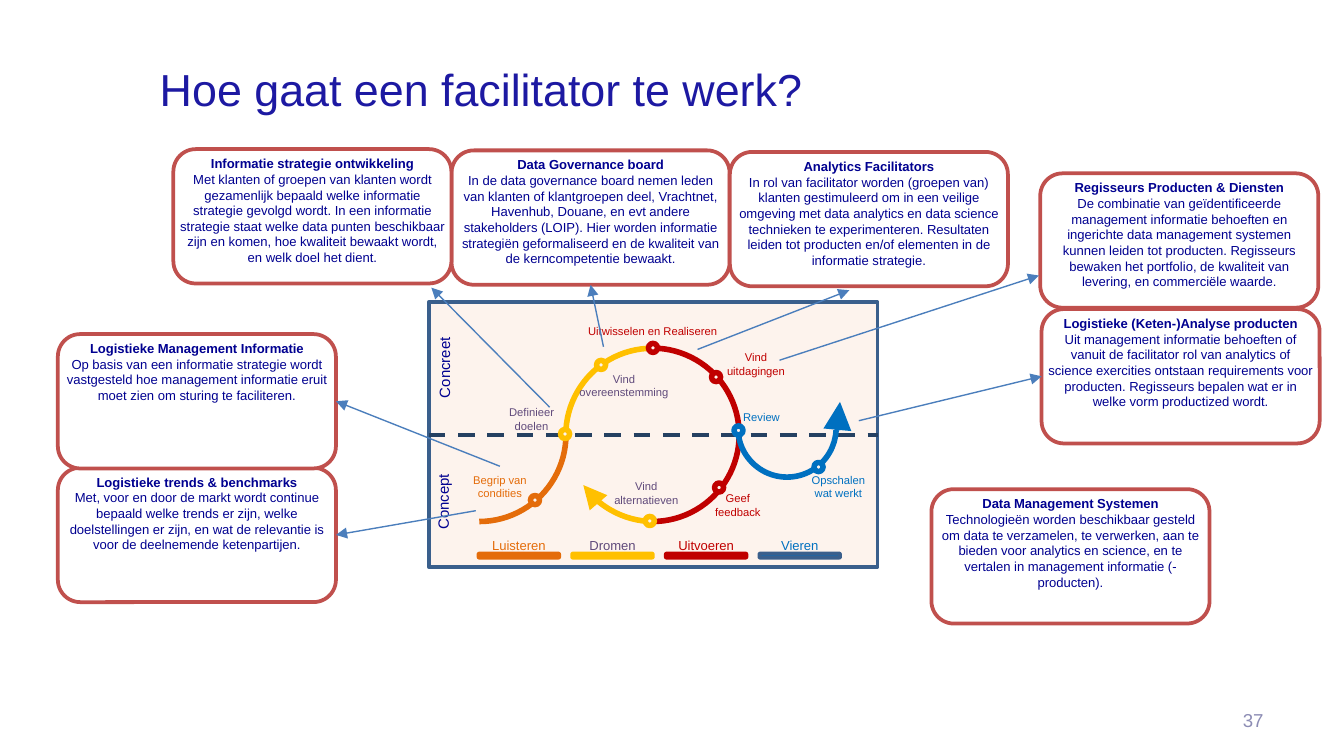
import pptx
import pptx.util
import pptx.dml.color
import pptx.enum.dml
import pptx.enum.shapes
import pptx.enum.text
import pptx.oxml.ns
from lxml import etree

Pt = pptx.util.Pt
Shape = pptx.enum.shapes.MSO_SHAPE
Align = pptx.enum.text.PP_ALIGN
Anchor = pptx.enum.text.MSO_ANCHOR

FONT = "Arial"
NAVY, CREAM, STEEL = "000090", "FDF3ED", "3A5F8C"
ORANGE, YELLOW, RED, BLUE, PURPLE = "E46C0A", "FFC000", "C00000", "0070C0", "604A7B"

# key: left, top, heading, body
CARD_W, CARD_H = 149, 72
CARDS = {
    "systems": (499, 262.1, "Data Management Systemen",
                "Technologieën worden beschikbaar gesteld om data te verzamelen, te verwerken, aan te bieden voor analytics en science, en te vertalen in management informatie (-producten)."),
    "owners": (557.3, 92.9, "Regisseurs Producten & Diensten",
               "De combinatie van geïdentificeerde management informatie behoeften en ingerichte data management systemen kunnen leiden tot producten. Regisseurs bewaken het portfolio, de kwaliteit van levering, en commerciële waarde."),
    "products": (558, 165.6, "Logistieke (Keten-)Analyse producten",
                 "Uit management informatie behoeften of vanuit de facilitator rol van analytics of science exercities ontstaan requirements voor producten. Regisseurs bepalen wat er in welke vorm productized wordt."),
    "trends": (31, 250.6, "Logistieke trends & benchmarks",
               "Met, voor en door de markt wordt continue bepaald welke trends er zijn, welke doelstellingen er zijn, en wat de relevantie is voor de deelnemende ketenpartijen."),
    "board": (241.9, 80.6, "Data Governance board",
              "In de data governance board nemen leden van klanten of klantgroepen deel, Vrachtnet, Havenhub, Douane, en evt andere stakeholders (LOIP). Hier worden informatie strategiën geformaliseerd en de kwaliteit van de kerncompetentie bewaakt."),
    "analytics": (391, 81.4, "Analytics Facilitators",
                  "In rol van facilitator worden (groepen van) klanten gestimuleerd om in een veilige omgeving met data analytics en data science technieken te experimenteren. Resultaten leiden tot producten en/of elementen in de informatie strategie."),
    "info": (31, 179, "Logistieke Management Informatie",
             "Op basis van een informatie strategie wordt vastgesteld hoe management informatie eruit moet zien om sturing te faciliteren."),
    "strategy": (92.9, 79.9, "Informatie strategie ontwikkeling",
                 "Met klanten of groepen van klanten wordt gezamenlijk bepaald welke informatie strategie gevolgd wordt. In een informatie strategie staat welke data punten beschikbaar zijn en komen, hoe kwaliteit bewaakt wordt, en welk doel het dient."),
}

# start x, y, end x, y, joined card, side
ARROWS = [
    (254.9, 273.6, 180, 286.6, "trends", 3),
    (417.6, 193, 556.6, 147.6, None, None),
    (323.3, 185.8, 316.4, 152.6, "board", 2),
    (294.5, 218.2, 231.1, 154.1, None, None),
    (267.8, 249.8, 180, 215, "info", 3),
    (460.1, 225.4, 558, 201.6, "products", 1),
    (373.7, 187.2, 455, 155.5, None, None),
]

# left, top, size, rotation, start and end angle, colour
ARCS = [
    (210.3, 186.5, 92.9, 90, 270, 0, ORANGE),
    (303.1, 186.5, 92.9, 270, 270, 0, YELLOW),
    (303.1, 186.5, 92.9, 0, 270, 0, RED),
    (303.1, 186.5, 92.9, 90, 270, 0, RED),
    (303.8, 186.5, 92.9, 180, 270, 317, YELLOW),
    (395.3, 203, 52.6, 180, 182.4, 0, BLUE),
]
# start x, y, end x, y, colour, width
TIPS = [(317.5, 265.7, 312.5, 259.9, YELLOW, 2.5), (448.6, 230.4, 450, 215.3, BLUE, 3)]

# text, its colour, bar fill, bar line
PHASES = [("Luisteren", ORANGE, ORANGE, ORANGE), ("Dromen", PURPLE, YELLOW, YELLOW),
          ("Uitvoeren", RED, RED, RED), ("Vieren", BLUE, BLUE, STEEL)]
BAR_W, NAME_W = 43.2, 50

# text, centre x, top, width, colour
STEPS = [
    ("Begrip van\ncondities", 267.8, 249.8, 46, ORANGE),
    ("Definieer\ndoelen", 284.8, 213.8, 42, PURPLE),
    ("Vind\novereenstemming", 334.3, 195.8, 66, PURPLE),
    ("Uitwisselen en Realiseren", 349.6, 170.3, 88, RED),
    ("Vind\nuitdagingen", 405, 184.3, 48, RED),
    ("Geef\nfeedback", 395.3, 259.9, 42, RED),
    ("Vind\nalternatieven", 346.3, 253.4, 52, PURPLE),
    ("Review", 407.9, 216.4, 38, BLUE),
    ("Opschalen\nwat werkt", 449.1, 249.8, 46, BLUE),
]

# centre x, y, colour
DOTS = [
    (286.6, 267.9, ORANGE), (302.7, 232.5, YELLOW), (348.1, 279.1, YELLOW),
    (385.2, 261.2, RED), (438.5, 250.2, BLUE), (395.6, 230.6, BLUE),
    (383.6, 202, RED), (349.8, 186.4, RED), (322, 195.5, YELLOW),
]

deck = pptx.Presentation()
deck.slide_width, deck.slide_height = Pt(720), Pt(405)
slide = deck.slides.add_slide(deck.slide_layouts[6])


def rgb(code):
    return pptx.dml.color.RGBColor.from_string(code)


def style(para, size, color, align=None, bold=False):
    para.alignment = align
    for run in para.runs:
        font = run.font
        font.name, font.size, font.bold = FONT, Pt(size), bold
        font.color.rgb = rgb(color)


def label(text, x, y, w, h, size, color, align=None, wrap=False, anchor=Anchor.TOP):
    box = slide.shapes.add_textbox(Pt(x), Pt(y), Pt(w), Pt(h))
    frame = box.text_frame
    frame.word_wrap, frame.vertical_anchor = wrap, anchor
    frame.paragraphs[0].text = text
    style(frame.paragraphs[0], size, color, align)
    return box


def shape(kind, x, y, w, h, fill=None, line=None, width=2):
    item = slide.shapes.add_shape(kind, Pt(x), Pt(y), Pt(w), Pt(h))
    item.shadow.inherit = False
    if fill:
        item.fill.solid()
        item.fill.fore_color.rgb = rgb(fill)
    else:
        item.fill.background()
    if line:
        item.line.color.rgb = rgb(line)
        item.line.width = Pt(width)
    else:
        item.line.fill.background()
    return item


def link(x1, y1, x2, y2, color, width, head=None):
    """Add a straight line; head is the size of its arrowhead."""
    wire = slide.shapes.add_connector(pptx.enum.shapes.MSO_CONNECTOR.STRAIGHT,
                                      Pt(x1), Pt(y1), Pt(x2), Pt(y2))
    wire.line.color.rgb = rgb(color)
    wire.line.width = Pt(width)
    qn = pptx.oxml.ns.qn
    if head:
        etree.SubElement(wire.line._get_or_add_ln(), qn("a:tailEnd"),
                         type="triangle", w=head, len=head)
    etree.SubElement(wire._element.spPr, qn("a:effectLst"))
    return wire


label("Hoe gaat een facilitator te werk?", 78.5, 16.6, 605.5, 49, 24, "1D19A2",
      wrap=True, anchor=Anchor.BOTTOM)
label("37", 516.2, 375.1, 167.8, 21.6, 10, "8C8CB4", Align.RIGHT, True, Anchor.MIDDLE)

panel = shape(Shape.RECTANGLE, 229.7, 162, 240.5, 141.8, CREAM, STEEL)
split = link(229.7, 232.9, 470.2, 232.9, "254061", 2.25)
split.line.dash_style = pptx.enum.dml.MSO_LINE.DASH
split.begin_connect(panel, 1)
split.end_connect(panel, 3)

for text, x, y, w in [("Concept", 215.3, 259.9, 44.6), ("Concreet", 214.6, 187.9, 47.5)]:
    label(text, x, y, w, 17.3, 8, NAVY).rotation = 270

for x, y, size, turn, start, end, color in ARCS:
    arc = shape(Shape.ARC, x, y, size, size, line=color, width=3)
    arc.rotation = turn
    arc.adjustments[0] = start * 0.6  # 60000 units a degree, scaled by 100000
    arc.adjustments[1] = end * 0.6
for tip in TIPS:
    link(*tip, "lg")

for i, (text, ink, fill, line) in enumerate(PHASES):
    x = 256.4 + i * 50.15
    shape(Shape.ROUNDED_RECTANGLE, x, 296.6, BAR_W, 2.2, fill, line)
    label(text, x + (BAR_W - NAME_W) / 2, 284.4, NAME_W, 15.8, 7, ink, Align.CENTER)

for text, mid, y, w, color in STEPS:
    h = 21.6 if "\n" in text else 14.4
    label(text, mid - w / 2, y, w, h, 6, color, Align.CENTER)

for x, y, color in DOTS:
    shape(Shape.OVAL, x - 2.5, y - 2.5, 5, 5, CREAM)
    ring = shape(Shape.DONUT, x - 2.9, y - 2.9, 5.8, 5.8, color, color)
    ring.adjustments[0] = 0.167

cards = {}
for key, (x, y, head, body) in CARDS.items():
    card = shape(Shape.ROUNDED_RECTANGLE, x, y, CARD_W, CARD_H, "FFFFFF", "C0504D")
    frame = card.text_frame
    frame.margin_left = frame.margin_right = frame.margin_top = frame.margin_bottom = 0
    frame.word_wrap, frame.vertical_anchor = True, Anchor.TOP
    frame.text = head + "\n" + body
    for i, para in enumerate(frame.paragraphs):
        style(para, 7, NAVY, Align.CENTER, bold=i == 0)
    cards[key] = card

for *ends, key, side in ARROWS:
    wire = link(*ends, "4B7EBC", 0.75, "med")
    if key:
        wire.end_connect(cards[key], side)

deck.save("out.pptx")
